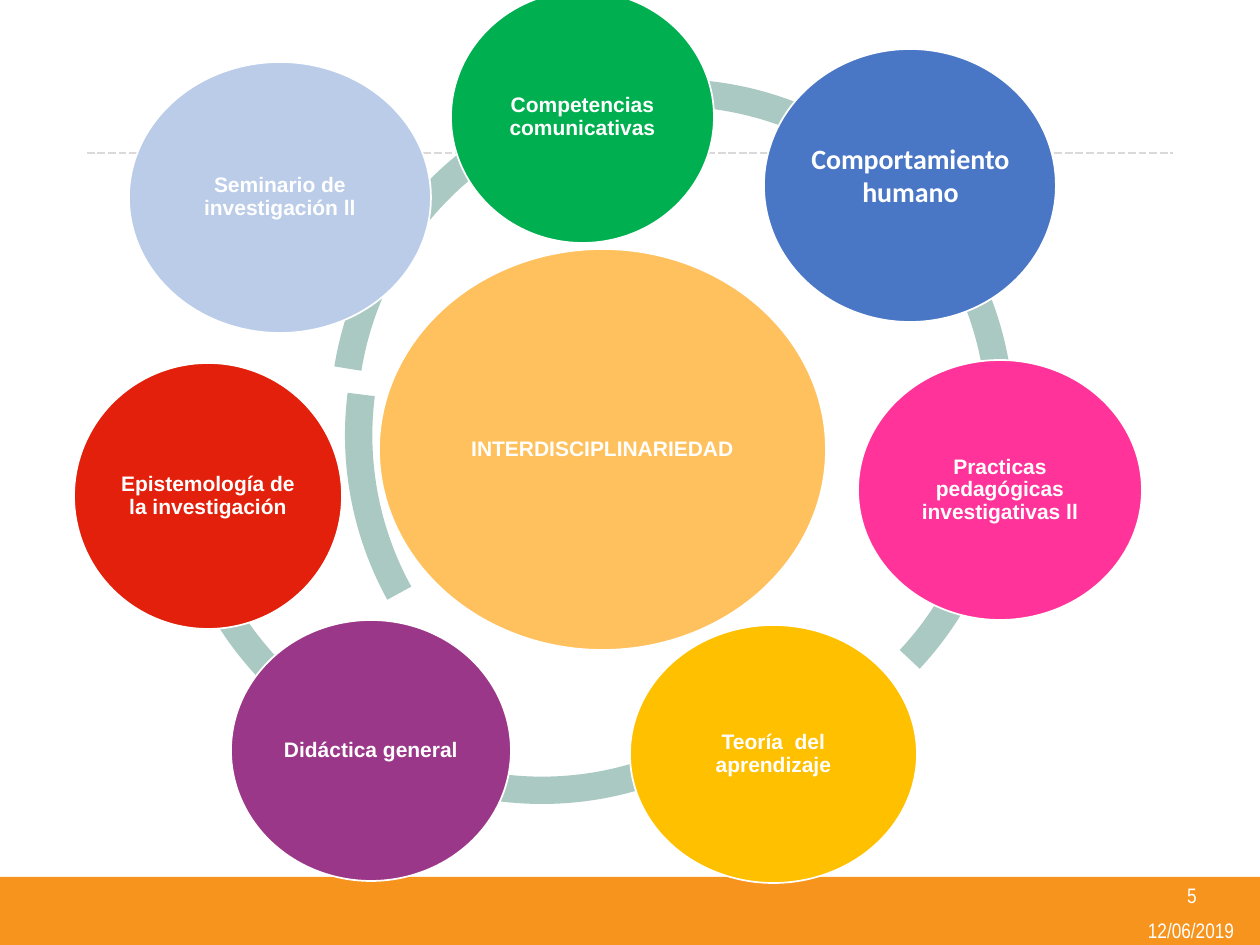
from lxml.etree import SubElement
from pptx import Presentation
from pptx.dml.color import RGBColor
from pptx.enum.dml import MSO_LINE
from pptx.enum.shapes import MSO_CONNECTOR, MSO_SHAPE
from pptx.enum.text import MSO_ANCHOR, PP_ALIGN
from pptx.oxml.ns import qn
from pptx.util import Inches, Pt

PX = Inches(10) / 1260
WHITE = RGBColor(0xFF, 0xFF, 0xFF)
ORANGE = RGBColor(0xF7, 0x94, 0x1D)
GREY = RGBColor(0xD9, 0xD9, 0xD9)
SAGE = RGBColor(0xAB, 0xC9, 0xC3)
PEACH = RGBColor(0xFF, 0xC1, 0x5E)
GREEN = RGBColor(0x00, 0xB0, 0x50)
BLUE = RGBColor(0x4A, 0x77, 0xC5)
PINK = RGBColor(0xFF, 0x33, 0x99)
YELLOW = RGBColor(0xFF, 0xC0, 0x00)
PURPLE = RGBColor(0x9B, 0x37, 0x88)
RED = RGBColor(0xE3, 0x20, 0x0B)
PALE_BLUE = RGBColor(0xBB, 0xCC, 0xE9)


def add_filled(kind, box, color):
    shape = slide.shapes.add_shape(kind, *(round(v * PX) for v in box))
    shape.shadow.inherit = False
    shape.fill.solid()
    shape.fill.fore_color.rgb = color
    shape.line.fill.background()
    return shape


def write(shape, text, font="Arial", size=12, bold=True, spacing=None,
          inset=None, wrap=True, anchor=MSO_ANCHOR.MIDDLE):
    frame = shape.text_frame
    frame.text = text
    frame.word_wrap = wrap
    frame.vertical_anchor = anchor
    if inset is not None:
        frame.margin_left = frame.margin_right = round(inset * PX)
        frame.margin_top = frame.margin_bottom = round(inset * PX)
    for paragraph in frame.paragraphs:
        paragraph.alignment = PP_ALIGN.CENTER
        paragraph.line_spacing = spacing
        paragraph.font.name = font
        paragraph.font.size = Pt(size)
        paragraph.font.bold = bold
        paragraph.font.color.rgb = WHITE


prs = Presentation()
prs.slide_width, prs.slide_height = round(1260 * PX), round(945 * PX)
slide = prs.slides.add_slide(prs.slide_layouts[6])

# Footer band and dashed rule
add_filled(MSO_SHAPE.RECTANGLE, (0, 877, 1260, 70), ORANGE)
for text, box in [("12/06/2019", (1124, 917, 134, 26)), ("5", (1126, 876, 132, 38))]:
    footer = slide.shapes.add_textbox(*(round(v * PX) for v in box))
    write(footer, text, font="Arial Narrow", bold=False)

rule = slide.shapes.add_connector(
    MSO_CONNECTOR.STRAIGHT, *(round(v * PX) for v in (87, 153, 1173, 153)))
rule.line.color.rgb = GREY
rule.line.width = Pt(1.5)
rule.line.dash_style = MSO_LINE.SQUARE_DOT
SubElement(rule._element.spPr, qn("a:effectLst"))

# Ring segments: left, top, start and end angle in degrees
RING_SIZE = 684
ring = [
    (165, 101, 136.4, 169.84),
    (192, 73, 99.68, 132.45),
    (200, 120, 72.44, 104.52),
    (233, 142, 32.16, 76.48),
    (328, 93, 5.61, 43.1),
    (330, 79, 189.19, 7.08),
    (345, 93, 151.2, 187.09),
]
for left, top, start, end in ring:
    segment = add_filled(MSO_SHAPE.BLOCK_ARC, (left, top, RING_SIZE, RING_SIZE), SAGE)
    # Angles are stored in 60000ths of a degree, adjustments in 100000ths
    segment.adjustments[0] = start * 0.6
    segment.adjustments[1] = end * 0.6
    segment.adjustments[2] = 0.04

subjects = [
    ("INTERDISCIPLINARIEDAD", (379, 249, 447, 401), PEACH),
    ("Competencias comunicativas", (451, -9, 263, 252), GREEN),
    ("", (764, 49, 292, 273), BLUE),
    ("Practicas pedagógicas investigativas ll", (858, 360, 284, 260), PINK),
    ("Teoría  del aprendizaje", (630, 625, 287, 258), YELLOW),
    ("Didáctica general", (231, 620, 280, 261), PURPLE),
    ("Epistemología de la investigación", (74, 363, 268, 266), RED),
    ("Seminario de investigación ll", (129, 62, 302, 271), PALE_BLUE),
]
for subject, box, color in subjects:
    circle = add_filled(MSO_SHAPE.OVAL, box, color)
    circle.line.color.rgb = WHITE
    circle.line.width = Pt(1)
    if subject:
        write(circle, subject, spacing=0.9, inset=2)

# The blue circle's label is wider than the circle's own text area
behaviour = slide.shapes.add_textbox(*(round(v * PX) for v in (797, 135, 227, 81)))
write(behaviour, "Comportamiento\nhumano", font="Calibri", size=16,
      wrap=False, anchor=MSO_ANCHOR.TOP)

prs.save("out.pptx")
